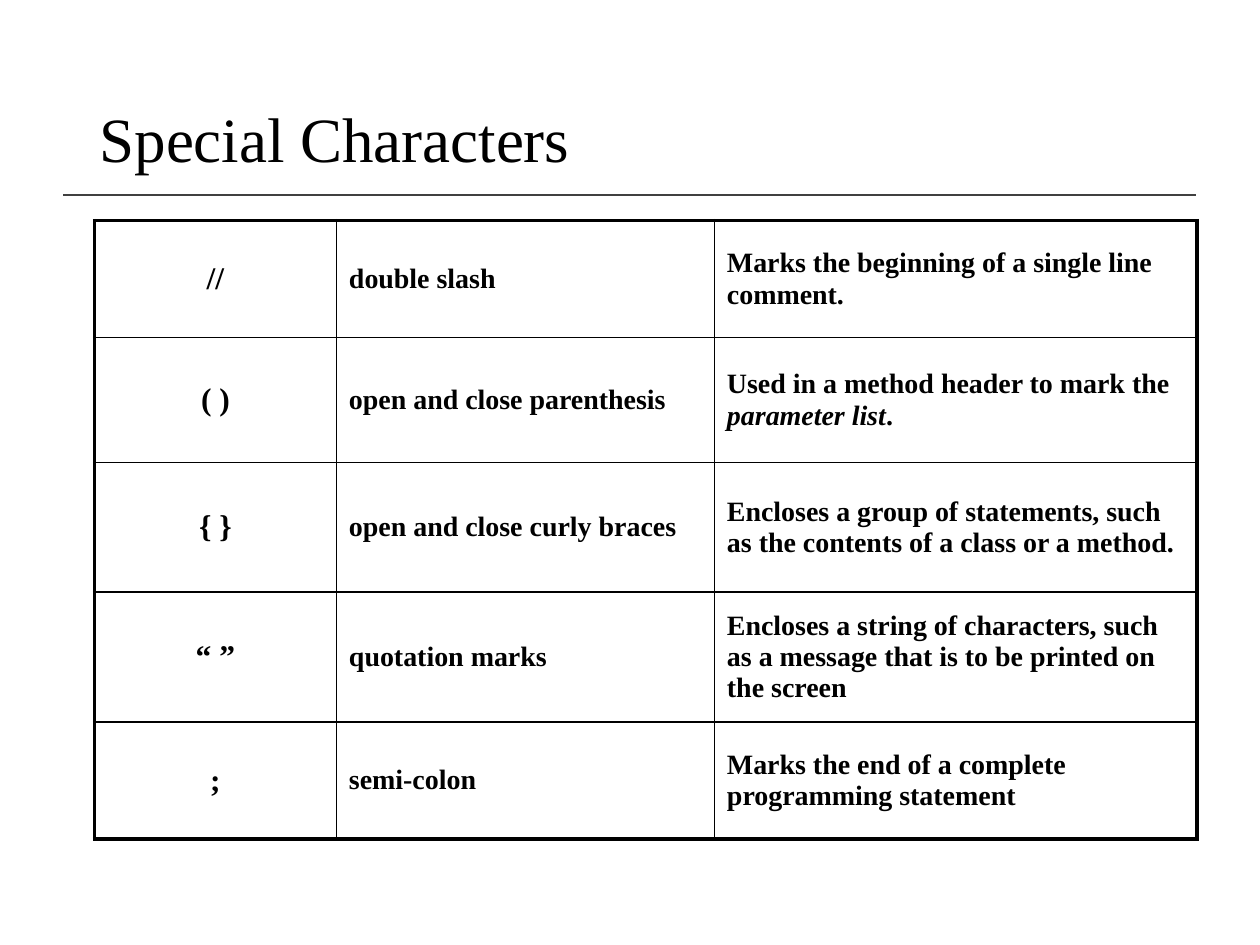
"""Build the slide that lists the special characters of a program."""
from lxml import etree
from pptx import Presentation, util as u
from pptx.dml.color import RGBColor
from pptx.enum import shapes, text
from pptx.oxml import ns

THEME = {
    "font": "Times New Roman",
    "ink": RGBColor(0, 0, 0),
    "rule": RGBColor(0x40, 0x40, 0x40),
    "paper": RGBColor(255, 255, 255),
    "title": 36, "sign": 18, "body": 16,
    "thin": 1, "thick": 2.25,
}
COLS = [1.92, 3, 3.83]
ROWS = [0.93, 0.99, 1.03, 1.03, 0.93]
DATA = [
    ("//", "double slash", "Marks the beginning of a single line comment."),
    ("( )", "open and close parenthesis",
     "Used in a method header to mark the *parameter list*."),
    ("{ }", "open and close curly braces",
     "Encloses a group of statements, such as the contents of a class or a method."),
    ("“ ”", "quotation marks",
     "Encloses a string of characters, such as a message that is to be printed on the screen"),
    (";", "semi-colon", "Marks the end of a complete programming statement"),
]


def style(run, size, bold=False):
    font = run.font
    font.name, font.size, font.bold = THEME["font"], u.Pt(size), bold
    font.color.rgb = THEME["ink"]


def edge(cell, side, width):
    props = cell._tc.get_or_add_tcPr()
    line = etree.SubElement(props, ns.qn("a:ln" + side), w=str(u.Pt(width)))
    fill = etree.SubElement(line, ns.qn("a:solidFill"))
    etree.SubElement(fill, ns.qn("a:srgbClr"), val=str(THEME["ink"]))


deck = Presentation()
deck.slide_width, deck.slide_height = u.Inches(10), u.Inches(7.5)
slide = deck.slides.add_slide(deck.slide_layouts[5])

rule = slide.shapes.add_connector(
    shapes.MSO_CONNECTOR.STRAIGHT,
    u.Inches(0.5), u.Inches(1.55), u.Inches(9.49), u.Inches(1.55))
rule.line.color.rgb, rule.line.width = THEME["rule"], u.Pt(THEME["thin"])
etree.SubElement(rule._element.spPr, ns.qn("a:effectLst"))

title = slide.shapes.title
title.left, title.top = u.Inches(0.69), u.Inches(0.4)
title.width, title.height = u.Inches(8.62), u.Inches(1.45)
title.text_frame.text = "Special Characters"
title.text_frame.vertical_anchor = text.MSO_ANCHOR.MIDDLE
head = title.text_frame.paragraphs[0]
head.alignment, head.line_spacing = text.PP_ALIGN.LEFT, 0.9
style(head.runs[0], THEME["title"])

table = slide.shapes.add_table(
    len(ROWS), len(COLS), u.Inches(0.75), u.Inches(1.75),
    u.Inches(sum(COLS)), u.Inches(sum(ROWS))).table
table.first_row = table.horz_banding = False
for col, width in zip(table.columns, COLS):
    col.width = u.Inches(width)
for row, height in zip(table.rows, ROWS):
    row.height = u.Inches(height)

for r, row in enumerate(DATA):
    for c, words in enumerate(row):
        cell = table.cell(r, c)
        cell.vertical_anchor = text.MSO_ANCHOR.MIDDLE
        outer = {"L": c == 0, "R": c == len(COLS) - 1,
                 "T": r == 0, "B": r == len(ROWS) - 1}
        for side, rim in outer.items():
            edge(cell, side, THEME["thick" if rim else "thin"])
        cell.fill.solid()
        cell.fill.fore_color.rgb = THEME["paper"]
        para = cell.text_frame.paragraphs[0]
        para.alignment = text.PP_ALIGN.LEFT if c else text.PP_ALIGN.CENTER
        for n, part in enumerate(words.split("*")):
            run = para.add_run()
            run.text = part
            style(run, THEME["body" if c else "sign"], True)
            run.font.italic = n % 2 == 1

deck.save("out.pptx")
